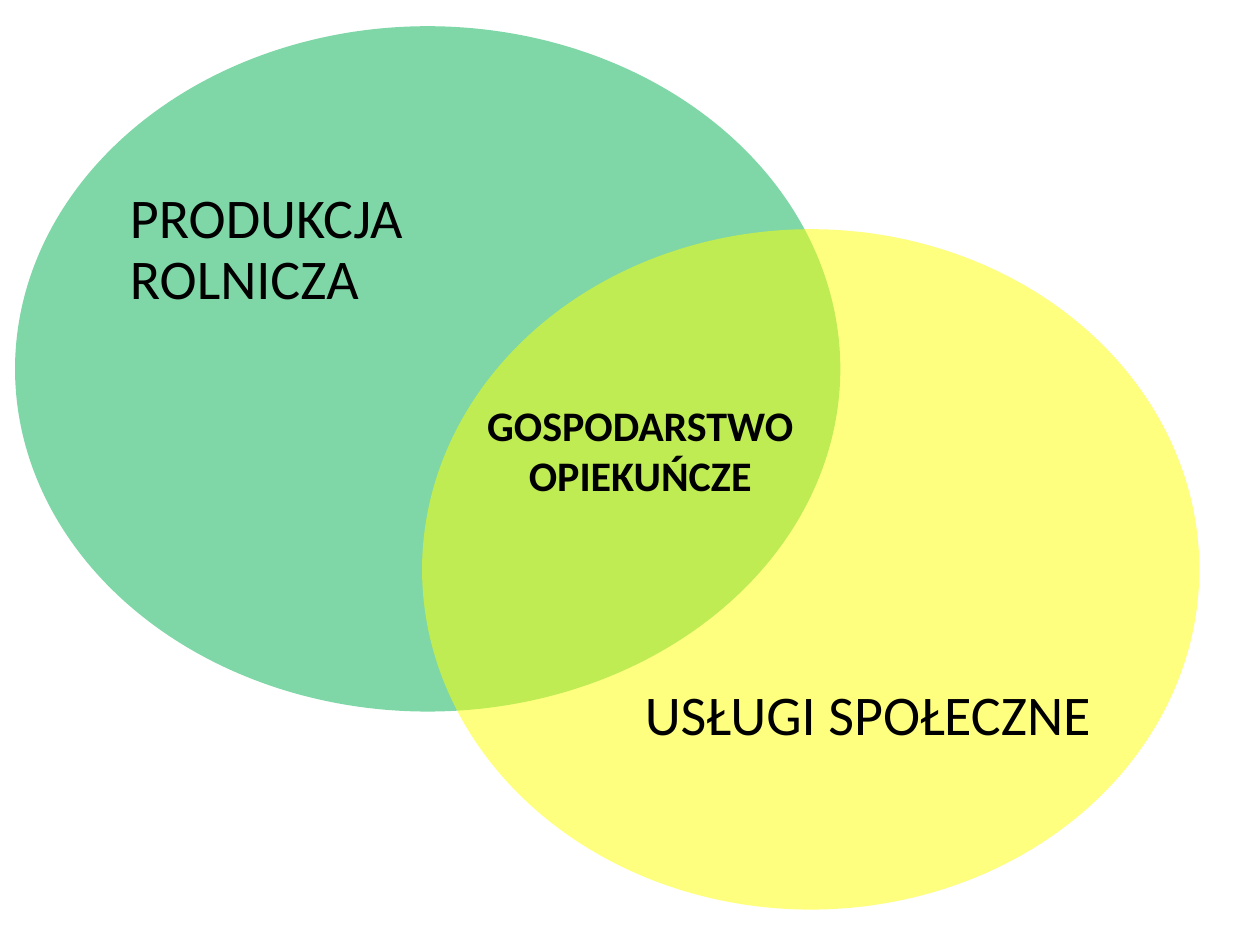
from dataclasses import dataclass

import pptx
import pptx.dml.color
import pptx.enum.shapes
import pptx.enum.text
import pptx.oxml.ns
import pptx.util
from lxml import etree

Pt = pptx.util.Pt
Align = pptx.enum.text.PP_ALIGN
Anchor = pptx.enum.text.MSO_ANCHOR


@dataclass
class Box:
    left: float
    top: float
    width: float
    height: float

    def lengths(self) -> list:
        return [Pt(n) for n in (self.left, self.top, self.width, self.height)]


@dataclass
class Circle:
    box: Box
    fill: str


@dataclass
class Label:
    text: str
    box: Box
    style: dict


def color(code: str) -> pptx.dml.color.RGBColor:
    return pptx.dml.color.RGBColor.from_string(code)


def draw_circle(slide, circle: Circle, alpha: int = 50) -> None:
    oval = pptx.enum.shapes.MSO_SHAPE.OVAL
    shape = slide.shapes.add_shape(oval, *circle.box.lengths())
    shape.shadow.inherit = False
    shape.line.fill.background()
    shape.fill.solid()
    shape.fill.fore_color.rgb = color(circle.fill)
    # Transparency
    tone = shape.fill._xPr.find(".//" + pptx.oxml.ns.qn("a:srgbClr"))
    etree.SubElement(tone, pptx.oxml.ns.qn("a:alpha"), val=str(alpha * 1000))


def add_text(slide, text: str, box: Box, *, size: float = 32, bold: bool = False,
             align=Align.LEFT, anchor=Anchor.TOP, space: float = 0.9,
             pads: tuple = (0, 0, 0, 0)) -> None:
    frame = slide.shapes.add_textbox(*box.lengths()).text_frame
    frame.word_wrap = True
    frame.vertical_anchor = anchor
    sides = ("left", "top", "right", "bottom")
    for side, pad in zip(sides, pads):
        setattr(frame, f"margin_{side}", Pt(pad))
    para = frame.paragraphs[0]
    para.alignment = align
    para.line_spacing = space
    run = para.add_run()
    run.text = text
    run.font.name = "Calibri"
    run.font.size = Pt(size)
    run.font.bold = bold
    run.font.color.rgb = color("000000")


CIRCLES = [
    Circle(Box(8.6, 15, 471.6, 391.6), "00B050"),
    Circle(Box(241.2, 131, 444.2, 388.8), "FFFF00"),
]

LABELS = [
    Label("PRODUKCJA ROLNICZA", Box(74.2, 61.2, 272.2, 298.8),
          dict(pads=(0, 47.6, 0, 0))),
    Label("USŁUGI SPOŁECZNE", Box(367.2, 176.4, 256.3, 297.4),
          dict(align=Align.RIGHT, anchor=Anchor.BOTTOM, pads=(0, 0, 0, 58.9))),
    Label("GOSPODARSTWO OPIEKUŃCZE", Box(269.3, 224.6, 193, 65.5),
          dict(size=24, bold=True, align=Align.CENTER, space=1.0,
               pads=(7.2, 3.6, 7.2, 3.6))),
]


def main() -> None:
    deck = pptx.Presentation()
    deck.slide_width, deck.slide_height = Pt(720), Pt(540)
    slide = deck.slides.add_slide(deck.slide_layouts[6])

    # Overlapping circles
    for circle in CIRCLES:
        draw_circle(slide, circle)

    # Labels
    for label in LABELS:
        add_text(slide, label.text, label.box, **label.style)

    deck.save("out.pptx")


if __name__ == "__main__":
    main()
